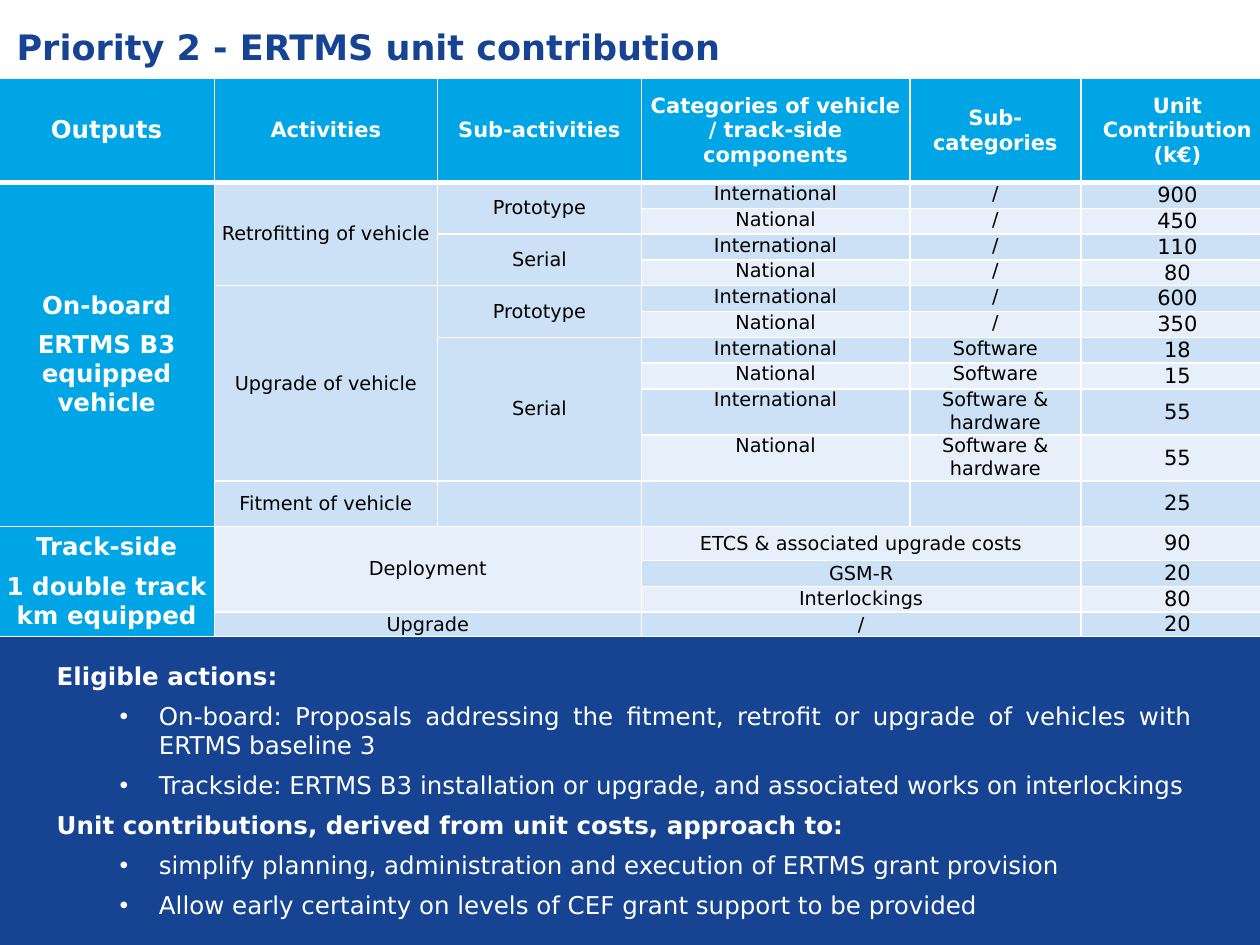
from lxml.etree import SubElement
from pptx import Presentation
from pptx.dml.color import RGBColor
from pptx.enum.shapes import MSO_SHAPE
from pptx.enum.text import MSO_ANCHOR, MSO_AUTO_SIZE, PP_ALIGN
from pptx.oxml import parse_xml
from pptx.oxml.ns import nsdecls, qn
from pptx.util import Cm, Pt

COLORS = {
    "navy": "164392",
    "cyan": "00A5E5",
    "band_dark": "CCE1F5",
    "band_light": "E7F0FA",
    "white": "FFFFFF",
    "black": "000000",
}
FONT = "DejaVu Sans"

COLUMN_WIDTHS = [4.34, 4.5, 4.11, 5.41, 3.45, 3.89]
ROW_HEIGHTS = [2.1] + [0.52] * 8 + [0.93, 0.93, 0.91, 0.69, 0.52, 0.52, 0.49]
ROWS = [
    ["Outputs", "Activities", "Sub-activities",
     "Categories of vehicle / track-side components", "Sub-categories",
     "Unit Contribution (k€)"],
    ["On-board\nERTMS B3 equipped vehicle", "Retrofitting of vehicle", "Prototype",
     "International", "/", "900"],
    ["", "", "", "National", "/", "450"],
    ["", "", "Serial", "International", "/", "110"],
    ["", "", "", "National", "/", "80"],
    ["", "Upgrade of vehicle", "Prototype", "International", "/", "600"],
    ["", "", "", "National", "/", "350"],
    ["", "", "Serial", "International", "Software", "18"],
    ["", "", "", "National", "Software", "15"],
    ["", "", "", "International", "Software & hardware", "55"],
    ["", "", "", "National", "Software & hardware", "55"],
    ["", "Fitment of vehicle", "", "", "", "25"],
    ["Track-side\n1 double track km equipped", "Deployment", "",
     "ETCS & associated upgrade costs", "", "90"],
    ["", "", "", "GSM-R", "", "20"],
    ["", "", "", "Interlockings", "", "80"],
    ["", "Upgrade", "", "/", "", "20"],
]
MERGES = [
    ((1, 0), (11, 0)), ((12, 0), (15, 0)),
    ((1, 1), (4, 1)), ((5, 1), (10, 1)),
    ((1, 2), (2, 2)), ((3, 2), (4, 2)), ((5, 2), (6, 2)), ((7, 2), (10, 2)),
    ((12, 1), (14, 2)), ((15, 1), (15, 2)),
] + [((row, 3), (row, 4)) for row in range(12, 16)]

ACTIONS = [
    ("Eligible actions:", [
        "On-board: Proposals addressing the fitment, retrofit or upgrade of "
        "vehicles with ERTMS baseline 3",
        "Trackside: ERTMS B3 installation or upgrade, and associated works on "
        "interlockings",
    ]),
    ("Unit contributions, derived from unit costs, approach to:", [
        "simplify planning, administration and execution of ERTMS grant provision",
        "Allow early certainty on levels of CEF grant support to be provided",
    ]),
]


def color(name):
    """Return the named palette colour."""
    return RGBColor.from_string(COLORS[name])


def place(shape, box):
    """Move a shape to a left, top, width, height box in centimetres."""
    shape.left, shape.top, shape.width, shape.height = (Cm(length) for length in box)


def add_run(paragraph, text, size, color_name, bold=False):
    """Add one formatted run to a paragraph."""
    run = paragraph.add_run()
    run.text = text
    run.font.name = FONT
    run.font.size = Pt(size)
    run.font.bold = bold
    run.font.color.rgb = color(color_name)


def set_borders(cell, bottom_width):
    """Give a cell white borders with the given bottom width."""
    properties = cell._tc.get_or_add_tcPr()
    widths = {"lnL": 1, "lnR": 1, "lnT": 1, "lnB": bottom_width}
    for position, (tag, width) in enumerate(widths.items()):
        properties.insert(position, parse_xml(
            f'<a:{tag} {nsdecls("a")} w="{Pt(width)}"><a:solidFill>'
            f'<a:srgbClr val="{COLORS["white"]}"/></a:solidFill></a:{tag}>'))


def format_cell(cell, row, column, text):
    """Fill one table cell according to its row and column."""
    is_heading = row == 0 or column == 0
    band = "band_dark" if row % 2 else "band_light"
    cell.fill.solid()
    cell.fill.fore_color.rgb = color("cyan" if is_heading else band)
    set_borders(cell, 3 if row == 0 else 1)
    cell.margin_left = cell.margin_right = Cm(0.15)
    cell.margin_top = cell.margin_bottom = 0
    top_aligned = 1 <= row <= 10 and column in (3, 4)
    cell.vertical_anchor = MSO_ANCHOR.TOP if top_aligned else MSO_ANCHOR.MIDDLE
    if not text:
        return
    size = 14 if column == 0 else 12 if row == 0 or column == 5 else 11
    frame = cell.text_frame
    for index, line in enumerate(text.split("\n")):
        paragraph = frame.add_paragraph() if index else frame.paragraphs[0]
        paragraph.alignment = PP_ALIGN.CENTER
        paragraph.space_after = Pt(6)
        add_run(paragraph, line, size, "white" if is_heading else "black", is_heading)


def add_header_band(slide, box):
    """Draw the white band behind the title."""
    band = slide.shapes.add_shape(MSO_SHAPE.RECTANGLE, *(Cm(length) for length in box))
    band.shadow.inherit = False
    band.fill.solid()
    band.fill.fore_color.rgb = color("white")
    band.line.fill.background()
    slide.shapes._spTree.insert(2, band._element)


def add_title(slide, box):
    """Write the slide title."""
    title = slide.shapes.title
    place(title, box)
    frame = title.text_frame
    frame.auto_size = MSO_AUTO_SIZE.NONE
    frame.vertical_anchor = MSO_ANCHOR.TOP
    paragraph = frame.paragraphs[0]
    paragraph.alignment = PP_ALIGN.LEFT
    add_run(paragraph, "Priority 2 - ERTMS unit contribution", 20, "navy", True)


def add_contribution_table(slide, box):
    """Build the table of unit contributions."""
    frame = slide.shapes.add_table(
        len(ROWS), len(COLUMN_WIDTHS), *(Cm(length) for length in box))
    table = frame.table
    for column, width in zip(table.columns, COLUMN_WIDTHS):
        column.width = Cm(width)
    for row, height in zip(table.rows, ROW_HEIGHTS):
        row.height = Cm(height)
    for row, texts in enumerate(ROWS):
        for column, text in enumerate(texts):
            format_cell(table.cell(row, column), row, column, text)
    for first, last in MERGES:
        table.cell(*first).merge(table.cell(*last))


def add_action_line(paragraph, text, is_heading):
    """Write a bold heading or a bulleted point."""
    paragraph.alignment = PP_ALIGN.JUSTIFY
    paragraph.space_before = Pt(0)
    paragraph.space_after = Pt(6)
    paragraph.level = 0 if is_heading else 1
    properties = paragraph._p.get_or_add_pPr()
    properties.set("marL", str(0 if is_heading else Cm(2.06)))
    properties.set("indent", str(0 if is_heading else Cm(-0.79)))
    if is_heading:
        SubElement(properties, qn("a:buNone"))
    else:
        SubElement(properties, qn("a:buChar")).set("char", "•")
    add_run(paragraph, text, 14, "white", is_heading)


def add_actions(slide, box):
    """Write the list of eligible actions and aims."""
    body = slide.placeholders[1]
    place(body, box)
    frame = body.text_frame
    frame.auto_size = MSO_AUTO_SIZE.NONE
    lines = [(text, text == heading)
             for heading, points in ACTIONS for text in [heading, *points]]
    for index, (text, is_heading) in enumerate(lines):
        paragraph = frame.add_paragraph() if index else frame.paragraphs[0]
        add_action_line(paragraph, text, is_heading)


def main():
    """Build and save the presentation."""
    presentation = Presentation()
    presentation.slide_width, presentation.slide_height = Cm(25.4), Cm(19.05)
    slide = presentation.slides.add_slide(presentation.slide_layouts[1])
    slide.background.fill.solid()
    slide.background.fill.fore_color.rgb = color("navy")
    add_header_band(slide, (0, 0, 25.4, 2.82))
    add_title(slide, (0.08, 0.38, 24.49, 1.12))
    add_contribution_table(
        slide, (-0.02, 1.58, sum(COLUMN_WIDTHS), sum(ROW_HEIGHTS)))
    add_actions(slide, (0.89, 13.2, 23.4, 5.52))
    presentation.save("out.pptx")


if __name__ == "__main__":
    main()
